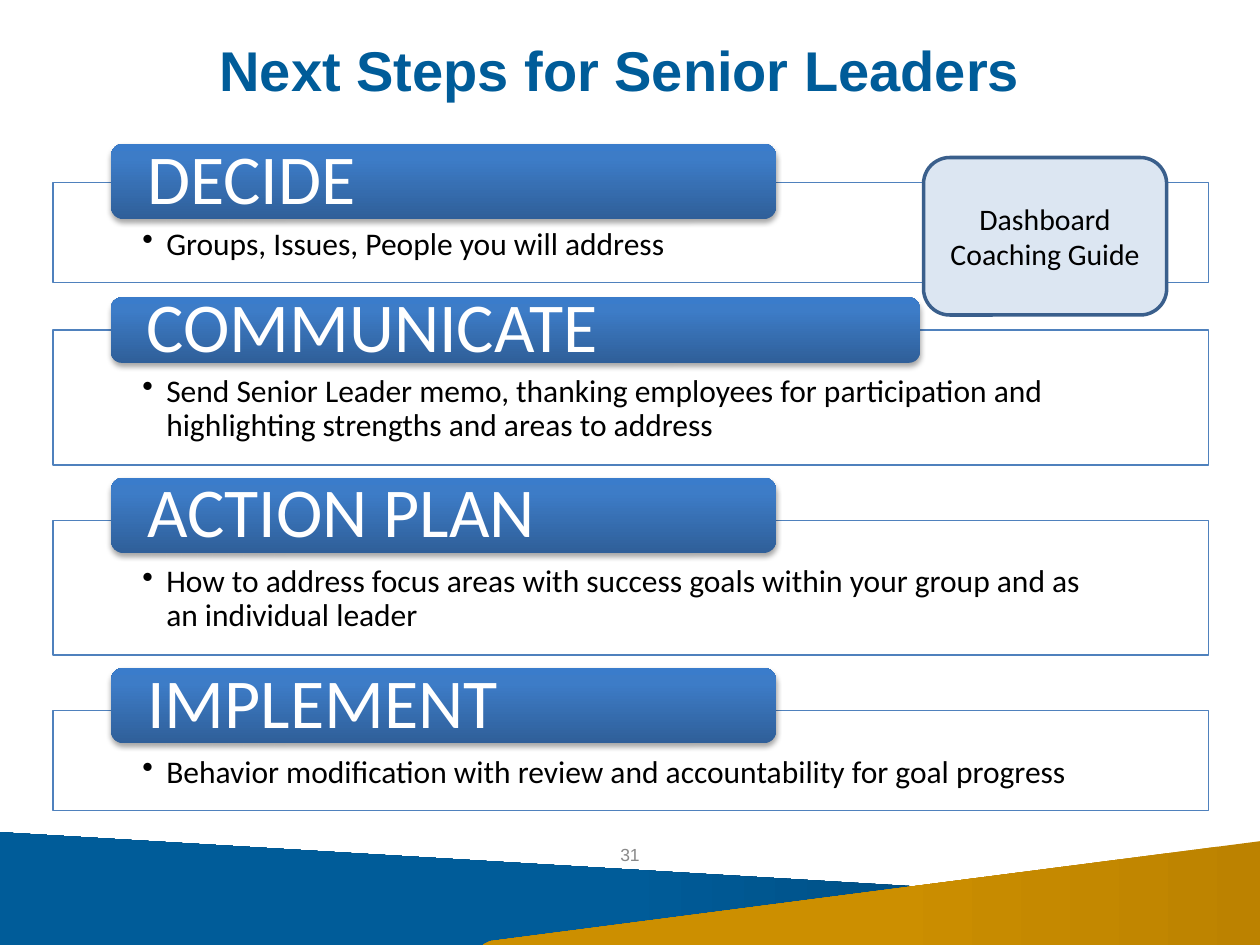
from pptx import Presentation
from pptx.dml.color import RGBColor
from pptx.enum.shapes import MSO_SHAPE as Shape
from pptx.enum.text import MSO_ANCHOR as Anchor, PP_ALIGN as Align
from pptx.oxml import parse_xml
from pptx.util import Inches, Pt

NAVY = RGBColor(0x00, 0x5C, 0x99)
NAVY_DARK = RGBColor(0x00, 0x43, 0x70)
GOLD = RGBColor(0xCC, 0x8F, 0x00)
GOLD_DARK = RGBColor(0xBC, 0x82, 0x00)
BAR_LOW = RGBColor(0x2F, 0x5F, 0x99)
BAR_MID = RGBColor(0x3D, 0x7C, 0xC7)
BAR_TOP = RGBColor(0x3A, 0x7C, 0xCB)
FRAME = RGBColor(0x4F, 0x81, 0xBD)
PALE = RGBColor(0xDC, 0xE6, 0xF2)
PALE_EDGE = RGBColor(0x3A, 0x5F, 0x8C)
GREY = RGBColor(0x89, 0x89, 0x89)
BLACK = RGBColor(0x00, 0x00, 0x00)
WHITE = RGBColor(0xFF, 0xFF, 0xFF)
NS = 'xmlns:a="http://schemas.openxmlformats.org/drawingml/2006/main"'


def set_gradient(shape, stops, angle):
    """Fill a shape with a linear gradient of (percent, colour) stops."""
    shape.fill.background()
    marks = "".join(
        f'<a:gs pos="{percent * 1000}"><a:srgbClr val="{color}"/></a:gs>'
        for percent, color in stops)
    gradient = parse_xml(f'<a:gradFill {NS} rotWithShape="1"><a:gsLst>{marks}</a:gsLst>'
                         f'<a:lin ang="{angle * 60000}" scaled="0"/></a:gradFill>')
    properties = shape.fill._xPr
    properties.replace(properties.noFill, gradient)


def write(shape, lines, size, color, font="Calibri", bold=False, align=Align.CENTER,
          anchor=Anchor.MIDDLE, insets=(0.1, 0.05, 0.1, 0.05), spacing=1.0):
    """Write one paragraph per line and return the last one."""
    frame = shape.text_frame
    frame.word_wrap = True
    frame.vertical_anchor = anchor
    (frame.margin_left, frame.margin_top,
     frame.margin_right, frame.margin_bottom) = [Inches(inset) for inset in insets]
    for index, line in enumerate(lines):
        para = frame.add_paragraph() if index else frame.paragraphs[0]
        para.alignment = align
        para.line_spacing = spacing
        span = para.add_run()
        span.text = line
        span.font.name = font
        span.font.size = Pt(size)
        span.font.bold = bold
        span.font.color.rgb = color
    return para


deck = Presentation()
deck.slide_width, deck.slide_height = Inches(10), Inches(7.5)
page = deck.slides.add_slide(deck.slide_layouts[6])
shapes = page.shapes

# Footer waves
waves = [
    ([(-0.05, 7.5), (9.9, 7.5), (9.88, 7.19), (-0.09, 6.6)], NAVY, NAVY_DARK),
    ([(10.02, 7.5), (3.83, 7.5), (3.89, 7.47), (10.05, 6.67)], GOLD, GOLD_DARK),
]
for points, color, dark in waves:
    corners = [(Inches(x), Inches(y)) for x, y in points]
    builder = shapes.build_freeform(*corners[0])
    builder.add_line_segments(corners[1:], close=True)
    wave = builder.convert_to_shape()
    wave.shadow.inherit = False
    wave.line.fill.background()
    set_gradient(wave, [(0, dark), (50, color), (100, color)], 180)

# Title and page number
title = shapes.add_textbox(Inches(0.42), Inches(-0.08), Inches(9), Inches(1.25))
write(title, ["Next Steps for Senior Leaders"], 32, NAVY, "Arial", bold=True)
number = shapes.add_textbox(Inches(4.25), Inches(6.58), Inches(1.5), Inches(0.4))
write(number, ["31"], 10, GREY, "Arial")

# Steps: heading, detail, frame top and height, bar top, width and height
steps = [
    ("DECIDE", "Groups, Issues, People you will address",
     1.45, 0.79, 1.14, 5.28, 0.6),
    ("COMMUNICATE", "Send Senior Leader memo, thanking employees for participation "
     "and highlighting strengths and areas to address",
     2.62, 1.07, 2.36, 6.42, 0.52),
    ("ACTION PLAN", "How to address focus areas with success goals within your group "
     "and as an individual leader",
     4.13, 1.07, 3.79, 5.28, 0.6),
    ("IMPLEMENT", "Behavior modification with review and accountability for goal progress",
     5.64, 0.79, 5.3, 5.28, 0.6),
]
for heading, detail, top, height, bar_top, bar_width, bar_height in steps:
    box = shapes.add_shape(Shape.RECTANGLE, Inches(0.42), Inches(top),
                           Inches(9.17), Inches(height))
    box.shadow.inherit = False
    box.fill.solid()
    box.fill.fore_color.rgb = WHITE
    box.line.color.rgb = FRAME
    box.line.width = Pt(0.75)
    para = write(box, [detail], 18, BLACK, align=Align.LEFT, anchor=Anchor.TOP,
                 insets=(0.71, 0.36, 0.71, 0.14), spacing=0.9)
    bullet = para._p.get_or_add_pPr()
    bullet.set("marL", str(Inches(0.19)))
    bullet.set("indent", str(Inches(-0.19)))
    bullet.append(parse_xml(f'<a:buChar {NS} char="•"/>'))

    bar = shapes.add_shape(Shape.ROUNDED_RECTANGLE, Inches(0.88), Inches(bar_top),
                           Inches(bar_width), Inches(bar_height))
    bar.shadow.inherit = False
    bar.line.fill.background()
    set_gradient(bar, [(0, BAR_LOW), (80, BAR_MID), (100, BAR_TOP)], 270)
    effects = bar._element.spPr.find("{*}effectLst")
    effects.append(parse_xml(
        f'<a:outerShdw {NS} blurRad="{Pt(3.1)}" dist="{Pt(1.8)}" dir="5400000" '
        'rotWithShape="0"><a:srgbClr val="000000"><a:alpha val="35000"/></a:srgbClr>'
        '</a:outerShdw>'))
    write(bar, [heading], 40, WHITE, align=Align.LEFT,
          insets=(0.26, 0, 0.26, 0), spacing=0.9)

# Guide callout
guide = shapes.add_shape(Shape.ROUNDED_RECTANGLE, Inches(7.33), Inches(1.25),
                         Inches(1.93), Inches(1.25))
guide.shadow.inherit = False
guide.fill.solid()
guide.fill.fore_color.rgb = PALE
guide.line.color.rgb = PALE_EDGE
guide.line.width = Pt(2)
write(guide, ["Dashboard", "Coaching Guide"], 17, BLACK)

deck.save("out.pptx")
